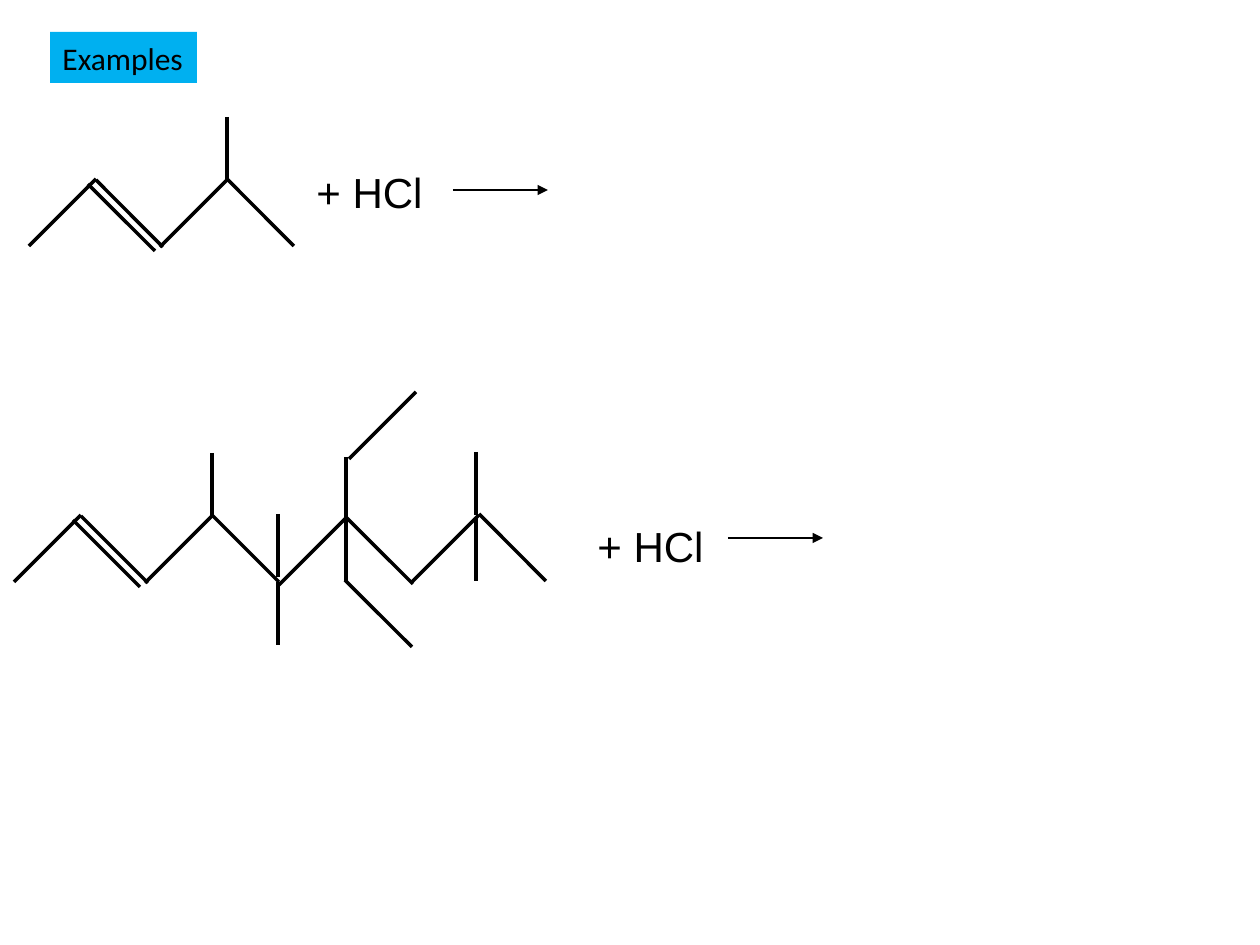
from lxml import etree
from pptx import Presentation
from pptx import util as u
from pptx.dml.color import RGBColor
from pptx.enum import shapes, text
from pptx.oxml import ns

PX = 914400 / 126
BLACK = RGBColor(0x00, 0x00, 0x00)
SKY = RGBColor(0x00, 0xB0, 0xF0)

LABEL_FORMAT = {"name": "Calibri", "size": u.Pt(18)}
REAGENT_FORMAT = {"name": "Arial", "size": u.Pt(24)}
FRAME_FORMAT = {"word_wrap": False, "auto_size": text.MSO_AUTO_SIZE.SHAPE_TO_FIT_TEXT}

LEFT, RIGHT, DOWN = (-67, 67), (67, 67), (0, 63)
ALKENE = [
    (67, 0, LEFT), (67, 1, RIGHT), (59, 5, RIGHT),
    (198, 1, LEFT), (198, -62, DOWN), (198, 0, RIGHT),
]
BRANCHED_TAIL = [
    (332, 3, LEFT), (332, 2, RIGHT), (465, 0, LEFT), (465, -1, RIGHT),
    (264, 67, DOWN), (264, -1, DOWN),
    (332, -58, DOWN), (332, 4, DOWN), (402, -123, LEFT), (331, 65, RIGHT),
    (462, -63, DOWN), (462, 3, DOWN),
]


def px(value):
    """Turn pixels into EMU."""
    return u.Emu(round(value * PX))


def write(shape, wording, font_format):
    """Put one left-aligned line of text into a shape."""
    frame = shape.text_frame
    for name, value in FRAME_FORMAT.items():
        setattr(frame, name, value)
    paragraph = frame.paragraphs[0]
    paragraph.alignment = text.PP_ALIGN.LEFT
    run = paragraph.add_run()
    run.text = wording
    for name, value in font_format.items():
        setattr(run.font, name, value)
    run.font.color.rgb = BLACK


def add_line(parent, left, top, step, width):
    """Draw a straight black line from a point along a step."""
    ends = (left, top, left + step[0], top + step[1])
    line = parent.shapes.add_connector(shapes.MSO_CONNECTOR.STRAIGHT, *map(px, ends))
    line.line.color.rgb = BLACK
    line.line.width = u.Pt(width)
    etree.SubElement(line._element.spPr, ns.qn("a:effectLst"))
    return line


def add_heading(slide, left, top, width, height):
    """Draw the filled heading label."""
    shape = slide.shapes.add_shape(
        shapes.MSO_SHAPE.RECTANGLE, *map(px, (left, top, width, height)))
    shape.shadow.inherit = False
    shape.fill.solid()
    shape.fill.fore_color.rgb = SKY
    shape.line.fill.background()
    write(shape, "Examples", LABEL_FORMAT)


def add_molecule(parent, left, top, bonds):
    """Draw a skeletal formula relative to its left atom and upper row."""
    for x, y, step in bonds:
        add_line(parent, left + x, top + y, step, 2)


def add_reagent(parent, left, top, arrow_left, arrow_top):
    """Write the reagent and draw its reaction arrow."""
    box = parent.shapes.add_textbox(*map(px, (left, top, 132, 63)))
    write(box, "+ HCl", REAGENT_FORMAT)
    arrow = add_line(parent, left + arrow_left, top + arrow_top, (95, 0), 1)
    etree.SubElement(arrow.line._get_or_add_ln(), ns.qn("a:tailEnd"), type="triangle")


def main():
    """Build and save the slide."""
    presentation = Presentation()
    presentation.slide_width, presentation.slide_height = px(1260), px(945)
    slide = presentation.slides.add_slide(presentation.slide_layouts[6])
    add_heading(slide, 50, 32, 147, 51)
    add_molecule(slide, 29, 179, ALKENE)
    add_reagent(slide, 304, 160, 149, 30)
    reaction = slide.shapes.add_group_shape()
    add_molecule(reaction, 14, 515, ALKENE + BRANCHED_TAIL)
    add_reagent(reaction, 585, 514, 143, 24)
    presentation.save("out.pptx")


if __name__ == "__main__":
    main()
